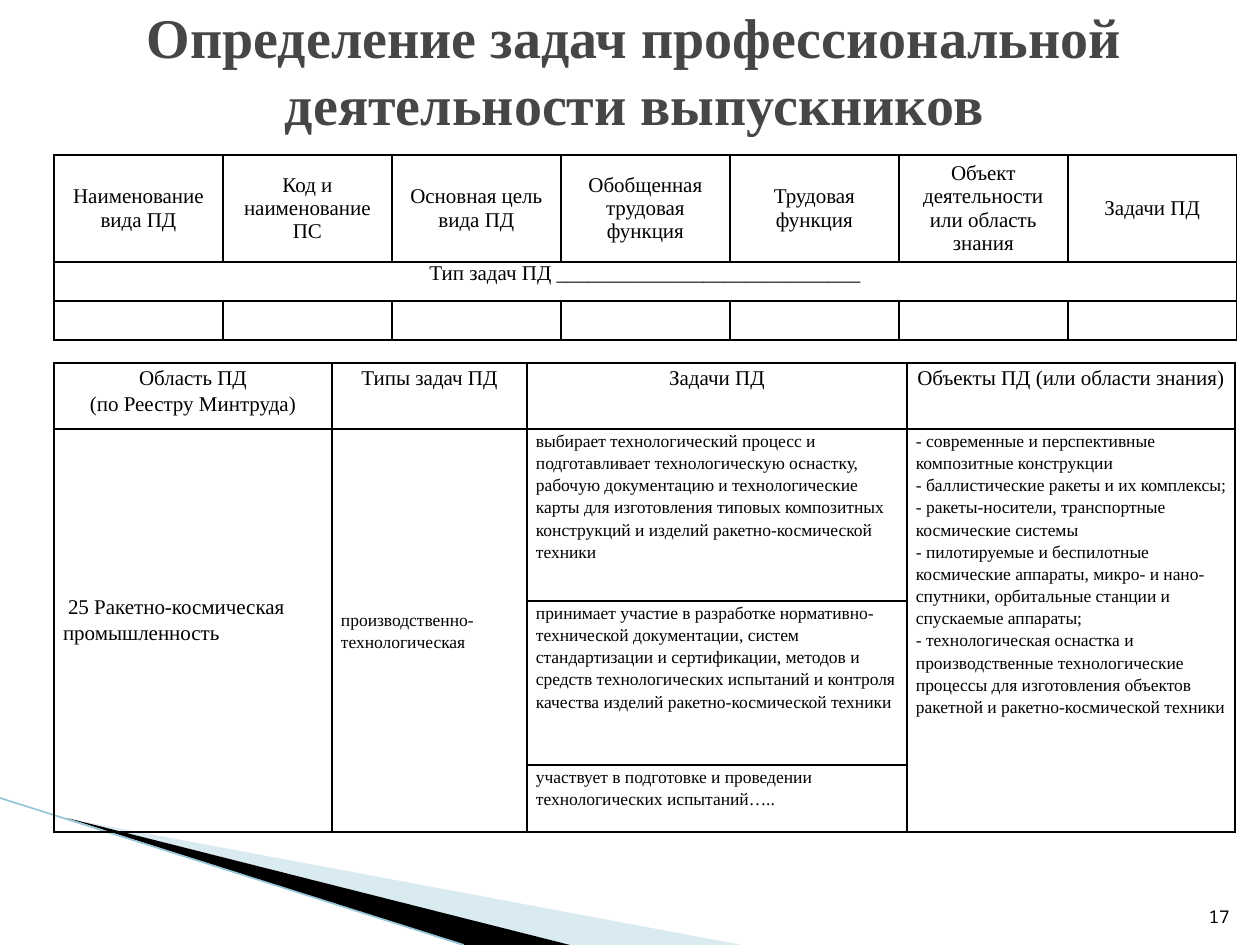
import pptx
import pptx.dml.color
import pptx.enum.shapes
import pptx.enum.text
import pptx.oxml
import pptx.oxml.ns
import pptx.util

PX = 914400 / 126
SERIF = "Times New Roman"
COLORS = {"title": "464646", "text": "000000", "wedge": "A0CBDC",
          "stripe": "000000", "edge": "97C5D8", "border": "000000"}
ALIGN = pptx.enum.text.PP_ALIGN
ANCHOR = pptx.enum.text.MSO_ANCHOR

HEADINGS = ["Наименование вида ПД", "Код и наименование ПС", "Основная цель вида ПД",
            "Обобщенная трудовая функция", "Трудовая функция",
            "Объект деятельности или область знания", "Задачи ПД"]
EXAMPLE_HEADINGS = ["Область ПД\v(по Реестру Минтруда)", "Типы задач ПД", "Задачи ПД",
                    "Объекты ПД (или области знания)"]
TASKS = [
    "выбирает технологический процесс и подготавливает технологическую оснастку, рабочую "
    "документацию и технологические карты для изготовления типовых композитных конструкций "
    "и изделий ракетно-космической техники",
    "принимает участие в разработке нормативно-технической документации, систем "
    "стандартизации и сертификации, методов и средств технологических испытаний и контроля "
    "качества изделий ракетно-космической техники",
    "участвует в подготовке и проведении технологических испытаний…..",
]
OBJECTS = [
    "- современные и перспективные композитные конструкции",
    "- баллистические ракеты и их комплексы;",
    "- ракеты-носители, транспортные космические системы",
    "- пилотируемые и беспилотные космические аппараты, микро- и нано-спутники, "
    "орбитальные станции и спускаемые аппараты;",
    "- технологическая оснастка и производственные технологические процессы для "
    "изготовления объектов ракетной и ракетно-космической техники",
]


def px(length):
    return pptx.util.Emu(round(length * PX))


def rgb(name):
    return pptx.dml.color.RGBColor.from_string(COLORS[name])


def apply(target, values):
    for attribute, value in values.items():
        setattr(target, attribute, value)


def write(frame, lines, size, color="text", font=SERIF, bold=False, **paragraph_format):
    """Fill a text frame with one paragraph per line, all in one format."""
    frame.text = "\n".join(lines)
    for paragraph in frame.paragraphs:
        apply(paragraph, paragraph_format)
        for run in paragraph.runs:
            apply(run.font, {"name": font, "size": pptx.util.Pt(size), "bold": bold})
            run.font.color.rgb = rgb(color)


def add_wedge(slide, points, color, opacity=100):
    builder = slide.shapes.build_freeform(*points[0], scale=PX)
    builder.add_line_segments(points[1:], close=True)
    wedge = builder.convert_to_shape()
    wedge.shadow.inherit = False
    wedge.fill.solid()
    wedge.fill.fore_color.rgb = rgb(color)
    wedge.line.fill.background()
    if opacity < 100:
        color_node = wedge.fill._xPr.find(".//" + pptx.oxml.ns.qn("a:srgbClr"))
        color_node.append(pptx.oxml.parse_xml(
            f'<a:alpha {pptx.oxml.ns.nsdecls("a")} val="{opacity * 1000}"/>'))


def add_corner(slide, left, top, width, height):
    """Draw the slanted wedges and their edge line in the lower left corner."""
    bottom = top + height
    add_wedge(slide, [(left + 69, top + 21), (left + width, bottom), (left + 570, bottom)],
              "wedge", 40)
    add_wedge(slide, [(left + 67, top + 20), (left + 570, bottom), (left + 462, bottom)],
              "stripe")
    edge = slide.shapes.add_connector(pptx.enum.shapes.MSO_CONNECTOR.STRAIGHT,
                                      px(left), px(top), px(left + 464), px(bottom))
    edge.line.color.rgb = rgb("edge")
    edge.line.width = pptx.util.Pt(0.95)
    edge._element.spPr.append(pptx.oxml.parse_xml(
        f'<a:effectLst {pptx.oxml.ns.nsdecls("a")}/>'))


def add_title(slide, left, top, width, height):
    title = slide.shapes.title
    apply(title, {"left": px(left), "top": px(top), "width": px(width), "height": px(height)})
    apply(title.text_frame, {"word_wrap": True, "vertical_anchor": ANCHOR.MIDDLE,
                             "auto_size": pptx.enum.text.MSO_AUTO_SIZE.NONE})
    write(title.text_frame, ["Определение задач профессиональной деятельности выпускников"],
          32, "title", bold=True, alignment=ALIGN.CENTER)


def add_grid(slide, left, top, columns, rows):
    """Add an unfilled table with thin borders; columns and rows are sizes in px."""
    grid = slide.shapes.add_table(len(rows), len(columns), px(left), px(top),
                                  px(sum(columns)), px(sum(rows))).table
    apply(grid, {"first_row": False, "horz_banding": False})
    for column, width in zip(grid.columns, columns):
        column.width = px(width)
    for row, height in zip(grid.rows, rows):
        row.height = px(height)
    for cell in grid.iter_cells():
        apply(cell, {"margin_left": px(9), "margin_right": px(9),
                     "margin_top": 0, "margin_bottom": 0})
        properties = cell._tc.get_or_add_tcPr()
        for side in "LRTB":
            properties.append(pptx.oxml.parse_xml(
                f'<a:ln{side} {pptx.oxml.ns.nsdecls("a")} w="12700"><a:solidFill>'
                f'<a:srgbClr val="{COLORS["border"]}"/></a:solidFill></a:ln{side}>'))
        cell.fill.background()
    return grid


def add_form_table(slide, left, top, width, height):
    row = 39
    count = len(HEADINGS)
    grid = add_grid(slide, left, top, [width // count] * count, [height - 2 * row, row, row])
    for index, heading in enumerate(HEADINGS):
        cell = grid.cell(0, index)
        cell.vertical_anchor = ANCHOR.MIDDLE
        write(cell.text_frame, [heading], 12, alignment=ALIGN.CENTER)
    grid.cell(1, 0).merge(grid.cell(1, count - 1))
    write(grid.cell(1, 0).text_frame, ["Тип задач ПД " + "_" * 29], 12,
          alignment=ALIGN.CENTER)


def add_example_table(slide, left, top, width, height):
    columns = [278, 195, 380]
    rows = [66, 172, 164]
    grid = add_grid(slide, left, top, columns + [width - sum(columns)],
                    rows + [height - sum(rows)])
    for index, heading in enumerate(EXAMPLE_HEADINGS):
        write(grid.cell(0, index).text_frame, [heading], 12,
              alignment=ALIGN.CENTER, line_spacing=1.15)
    for index in (0, 1, 3):
        grid.cell(1, index).merge(grid.cell(len(rows), index))

    area, kind, objects = (grid.cell(1, index) for index in (0, 1, 3))
    area.margin_top = px(163)
    write(area.text_frame, ["25 Ракетно-космическая промышленность"], 12, line_spacing=1.15)
    area.text_frame.paragraphs[0]._p.get_or_add_pPr().set("indent", str(px(5)))
    kind.vertical_anchor = ANCHOR.MIDDLE
    write(kind.text_frame, ["производственно-технологическая"], 10, line_spacing=1.15)
    write(objects.text_frame, OBJECTS, 10, line_spacing=1.15)
    for index, task in enumerate(TASKS, 1):
        write(grid.cell(index, 2).text_frame, [task], 10, line_spacing=1.15)


def add_page_number(slide, left, top, width, height):
    frame = slide.shapes.add_textbox(px(left), px(top), px(width), px(height)).text_frame
    apply(frame, {"word_wrap": True, "vertical_anchor": ANCHOR.BOTTOM})
    write(frame, ["17"], 10, font="Noto Sans Mono", alignment=ALIGN.RIGHT)


def main():
    presentation = pptx.Presentation()
    apply(presentation, {"slide_width": px(1260), "slide_height": px(945)})
    slide = presentation.slides.add_slide(presentation.slide_layouts[5])
    add_corner(slide, 0, 798, 742, 147)
    add_title(slide, 44, 16, 1181, 107)
    add_page_number(slide, 1192, 883, 50, 50)
    add_example_table(slide, 54, 363, 1181, 469)
    add_form_table(slide, 54, 155, 1183, 185)
    presentation.save("out.pptx")


if __name__ == "__main__":
    main()
